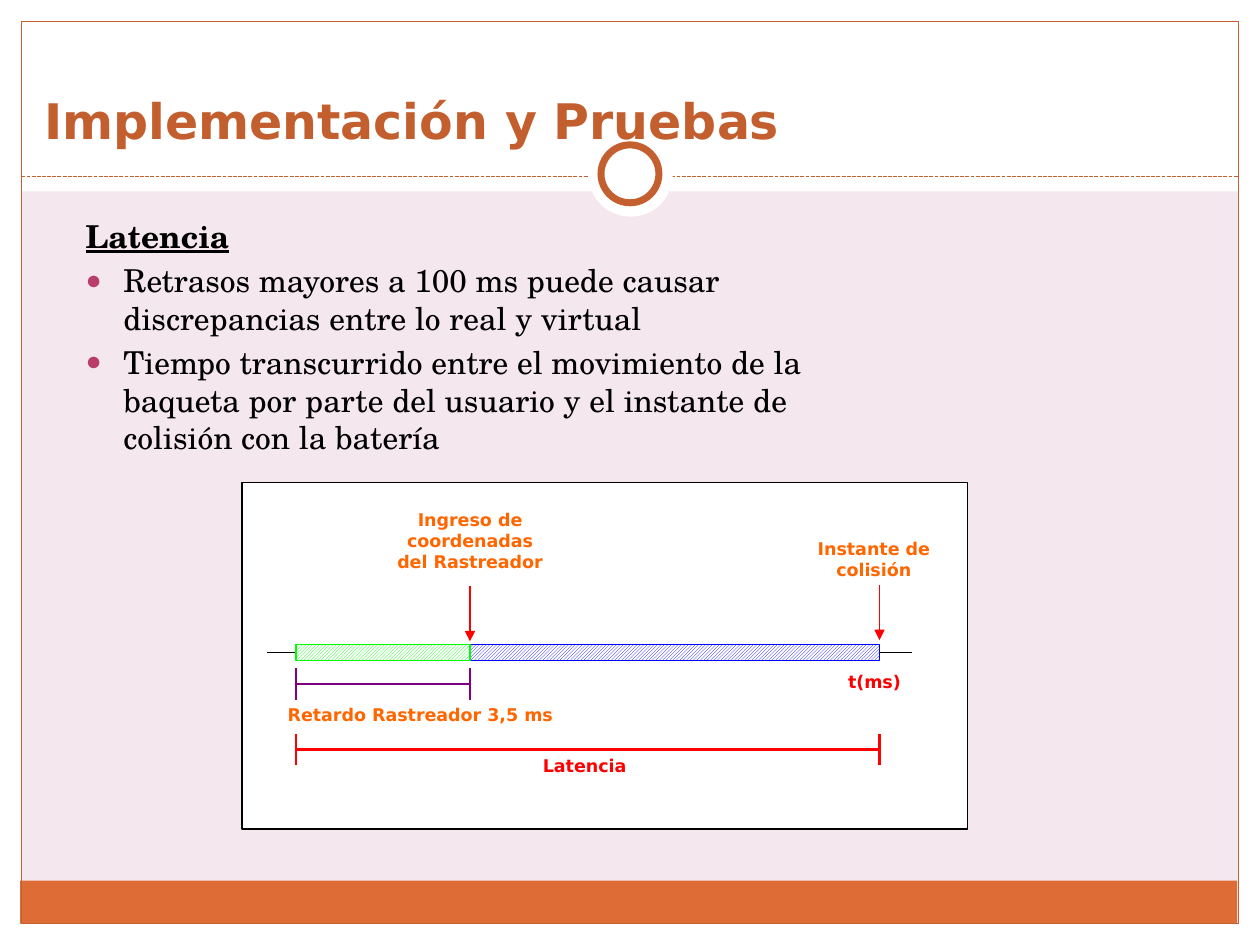
from lxml import etree
from pptx import Presentation
from pptx import util as u
from pptx.dml.color import RGBColor
from pptx.enum import dml, shapes, text
from pptx.oxml.ns import qn

SANS, SERIF = "DejaVu Sans", "TeX Gyre Schola"
WHITE, BLACK, RED, ORANGE, PURPLE = "FFFFFF", "000000", "FF0000", "FF6600", "800080"
BLUE, GREEN, RUST, BULLET = "0000FF", "00FF00", "C45F30", "B83D68"

TITLE = "Implementación y Pruebas"
HEADING = "Latencia"
POINTS = [
    "Retrasos mayores a 100 ms puede causar discrepancias entre lo real y virtual",
    "Tiempo transcurrido entre el movimiento de la baqueta por parte del usuario "
    "y el instante de colisión con la batería",
]
LABELS = [
    ("Latencia", (4.2, 5.94, 0.88, 0.26), RED),
    ("Instante de colisión", (6.37, 4.22, 1.13, 0.5), ORANGE),
    ("Ingreso de coordenadas del Rastreador", (3.04, 3.99, 1.38, 0.75), ORANGE),
    ("Retardo Rastreador 3,5 ms", (2.13, 5.54, 2.41, 0.31), ORANGE),
    ("t(ms)", (6.5, 5.28, 0.88, 0.25), RED),
]
MARGINS = [
    (0, 7.33, 10, 0.17),
    (0, 0, 10, 1.52),
    (0, 0, 0.17, 7.5),
    (9.83, 0, 0.17, 7.5),
]
START, INPUT, COLLISION = 2.35, 3.73, 6.98
AXIS_Y, BAR_HEIGHT, TICK = 5.18, 0.13, 0.25
SPANS = [(START, COLLISION, 5.95, RED, 1.5), (START, INPUT, 5.43, PURPLE, 1)]
EVENTS = [(INPUT, 4.65, 5.09), (COLLISION, 4.64, 5.08)]
BARS = [(INPUT, COLLISION, BLUE), (START, INPUT, GREEN)]


def color(hex_value):
    return RGBColor.from_string(hex_value)


def write(paragraph, words, size=10, font=SANS, ink=BLACK, bold=False,
          underline=False, align=text.PP_ALIGN.LEFT):
    paragraph.alignment = align
    run = paragraph.add_run()
    run.text = words
    run.font.size = u.Pt(size)
    run.font.name = font
    run.font.bold = bold
    run.font.underline = underline
    run.font.color.rgb = color(ink)


def place(item, box):
    item.left, item.top, item.width, item.height = map(u.Inches, box)


def draw(parent, box, fill=None, line=None, width=0.75, kind=shapes.MSO_SHAPE.RECTANGLE):
    figure = parent.shapes.add_shape(kind, *map(u.Inches, box))
    figure.shadow.inherit = False
    if fill:
        figure.fill.solid()
        figure.fill.fore_color.rgb = color(fill)
    else:
        figure.fill.background()
    if line:
        figure.line.color.rgb = color(line)
        figure.line.width = u.Pt(width)
    else:
        figure.line.fill.background()
    return figure


def connect(parent, x1, y1, x2, y2, ink, width=0.75, dash=None, arrow=False):
    stroke = parent.shapes.add_connector(
        shapes.MSO_CONNECTOR.STRAIGHT, *map(u.Inches, (x1, y1, x2, y2)))
    stroke.line.color.rgb = color(ink)
    stroke.line.width = u.Pt(width)
    if dash:
        stroke.line.dash_style = dash
    if arrow:
        etree.SubElement(stroke.line._get_or_add_ln(), qn("a:tailEnd"), type="triangle")
    etree.SubElement(stroke._element.spPr, qn("a:effectLst"))


def indent(paragraph, bullet):
    paragraph.space_before = u.Pt(3.6)
    props = paragraph._p.get_or_add_pPr()
    props.set("marL", str(u.Inches(0.3)))
    props.set("indent", str(u.Inches(-0.3)))
    if not bullet:
        etree.SubElement(props, qn("a:buNone"))
        return
    tint = etree.SubElement(props, qn("a:buClr"))
    etree.SubElement(tint, qn("a:srgbClr"), val=BULLET)
    etree.SubElement(props, qn("a:buSzPct"), val="85000")
    etree.SubElement(props, qn("a:buChar"), char="●")


def draw_frame(slide):
    for margin in MARGINS:
        draw(slide, margin, WHITE)
    draw(slide, (0.16, 6.99, 9.66, 0.34), "DE6C36")
    draw(slide, (0.17, 0.17, 9.66, 7.16), line=RUST)
    connect(slide, 0.17, 1.4, 9.83, 1.4, RUST, dash=dml.MSO_LINE.SQUARE_DOT)
    oval = shapes.MSO_SHAPE.OVAL
    draw(slide, (4.67, 1.05, 0.67, 0.67), WHITE, kind=oval)
    draw(slide, (4.77, 1.15, 0.46, 0.46), WHITE, RUST, 4, oval)


def fill_placeholders(slide):
    title, body = slide.shapes.title, slide.placeholders[1]
    place(title, (0.25, 0.67, 9.5, 0.57))
    place(body, (0.58, 1.67, 6.25, 2.31))
    for holder in (title, body):
        holder.text_frame.auto_size = text.MSO_AUTO_SIZE.NONE
        slide.shapes._spTree.append(holder._element)
    write(title.text_frame.paragraphs[0], TITLE, size=28, ink="C35E2E", bold=True)
    heading = body.text_frame.paragraphs[0]
    indent(heading, bullet=False)
    write(heading, HEADING, size=18, font=SERIF, bold=True, underline=True)
    for point in POINTS:
        paragraph = body.text_frame.add_paragraph()
        indent(paragraph, bullet=True)
        write(paragraph, point, size=18, font=SERIF)


def draw_timeline(slide):
    timeline = slide.shapes.add_group_shape()
    draw(timeline, (1.92, 3.83, 5.76, 2.75), WHITE, BLACK)
    for words, box, ink in LABELS:
        frame = draw(timeline, box, WHITE).text_frame
        frame.word_wrap = True
        frame.vertical_anchor = text.MSO_ANCHOR.TOP
        write(frame.paragraphs[0], words, ink=ink, bold=True, align=text.PP_ALIGN.CENTER)
    for left, right, y, ink, width in SPANS:
        connect(timeline, left, y, right, y, ink, width)
        for x in (left, right):
            connect(timeline, x, y - TICK / 2, x, y + TICK / 2, ink, width)
    for x, top, bottom in EVENTS:
        connect(timeline, x, top, x, bottom, RED, arrow=True)
    connect(timeline, 2.12, AXIS_Y, 7.24, AXIS_Y, BLACK)
    for left, right, ink in BARS:
        bar = draw(timeline, (left, AXIS_Y - BAR_HEIGHT / 2, right - left, BAR_HEIGHT), line=ink)
        bar.fill.patterned()
        bar.fill.pattern = dml.MSO_PATTERN.LIGHT_UPWARD_DIAGONAL
        bar.fill.fore_color.rgb = color(ink)
        bar.fill.back_color.rgb = color(WHITE)


def main():
    deck = Presentation()
    deck.slide_width, deck.slide_height = u.Inches(10), u.Inches(7.5)
    slide = deck.slides.add_slide(deck.slide_layouts[1])
    slide.background.fill.solid()
    slide.background.fill.fore_color.rgb = color("F4E7ED")
    draw_frame(slide)
    fill_placeholders(slide)
    draw_timeline(slide)
    deck.save("out.pptx")


if __name__ == "__main__":
    main()
